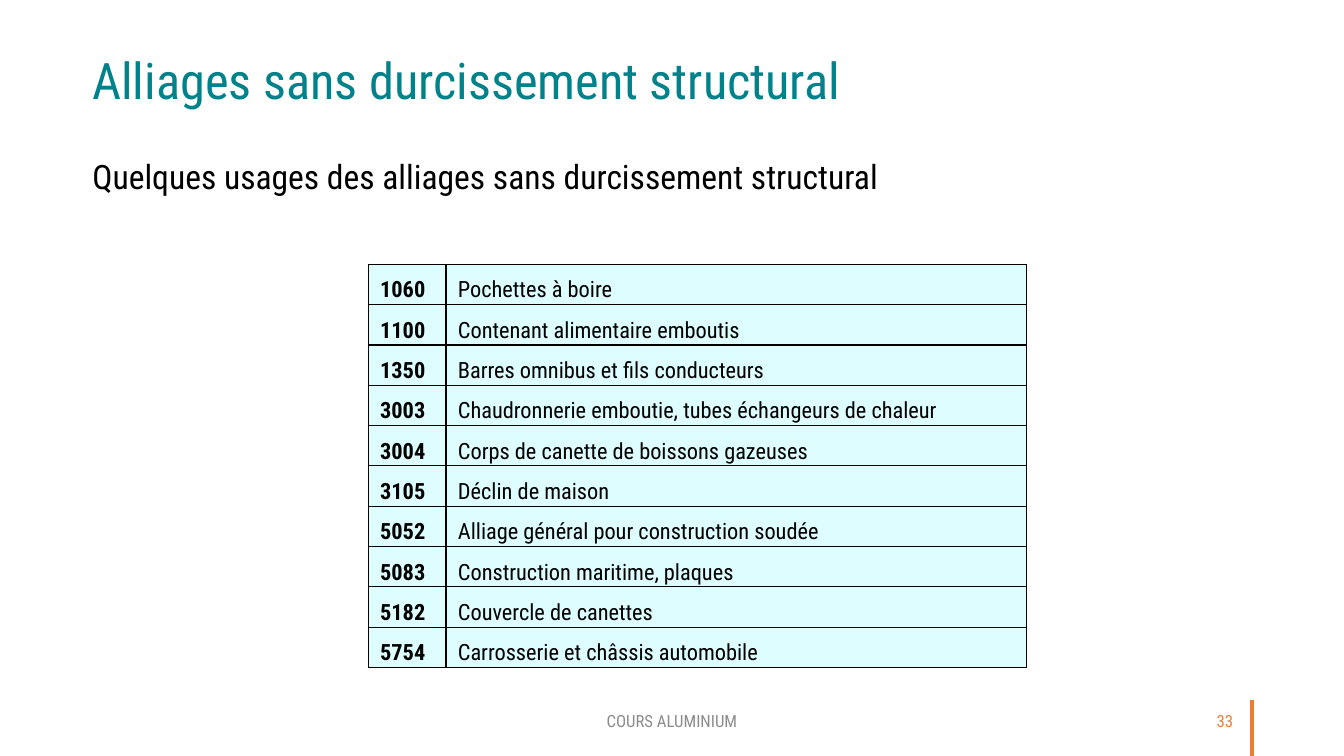
import dataclasses

import pptx
import pptx.dml.color
import pptx.enum.shapes
import pptx.enum.text
import pptx.oxml
import pptx.oxml.ns
import pptx.util

Cm = pptx.util.Cm
Pt = pptx.util.Pt
ALIGN = pptx.enum.text.PP_ALIGN
ANCHOR = pptx.enum.text.MSO_ANCHOR

FONT = "Roboto Condensed"
COLORS = {
    "title": "00828B",
    "text": "000000",
    "cell": "DDFDFF",
    "grid": "000000",
    "foot": "8C8C8C",
    "accent": "ED7D31",
}


@dataclasses.dataclass
class Label:
    text: str
    left: float
    top: float
    width: float
    height: float
    size: int
    color: str
    align: ALIGN = ALIGN.LEFT
    anchor: ANCHOR = ANCHOR.TOP
    lead: float = 0.9


@dataclasses.dataclass
class Alloy:
    code: str
    usage: str


LABELS = [
    Label("Alliages sans durcissement structural",
          2.33, 1.42, 27.28, 2.57, 36, "title"),
    Label("Quelques usages des alliages sans durcissement structural",
          2.33, 4.04, 29.21, 2, 24, "text"),
    Label("COURS ALUMINIUM", 11.22, 17.65, 11.43, 1.02, 12, "foot",
          ALIGN.CENTER, ANCHOR.MIDDLE, 1.0),
    Label("33", 23.92, 17.65, 7.16, 1.02, 12, "accent",
          ALIGN.RIGHT, ANCHOR.MIDDLE, 1.0),
]

ALLOYS = [
    Alloy("1060", "Pochettes à boire"),
    Alloy("1100", "Contenant alimentaire emboutis"),
    Alloy("1350", "Barres omnibus et fils conducteurs"),
    Alloy("3003", "Chaudronnerie emboutie, tubes échangeurs de chaleur"),
    Alloy("3004", "Corps de canette de boissons gazeuses"),
    Alloy("3105", "Déclin de maison"),
    Alloy("5052", "Alliage général pour construction soudée"),
    Alloy("5083", "Construction maritime, plaques"),
    Alloy("5182", "Couvercle de canettes"),
    Alloy("5754", "Carrosserie et châssis automobile"),
]
WIDTHS = (1.96, 14.63)
ROW = 1.0


def tint(name: str) -> pptx.dml.color.RGBColor:
    return pptx.dml.color.RGBColor.from_string(COLORS[name])


def style(frame, size: int, color: str, align: ALIGN, lead: float,
          bold: bool = False) -> None:
    para = frame.paragraphs[0]
    para.alignment = align
    para.line_spacing = lead
    font = para.runs[0].font
    font.name = FONT
    font.size = Pt(size)
    font.bold = bold
    font.color.rgb = tint(color)


def add_label(slide, label: Label) -> None:
    box = slide.shapes.add_textbox(Cm(label.left), Cm(label.top),
                                   Cm(label.width), Cm(label.height))
    frame = box.text_frame
    frame.word_wrap = True
    frame.vertical_anchor = label.anchor
    frame.margin_left = frame.margin_right = 0
    frame.margin_top = frame.margin_bottom = 0
    frame.text = label.text
    style(frame, label.size, label.color, label.align, label.lead)


def add_grid(cell) -> None:
    props = cell._tc.get_or_add_tcPr()
    space = pptx.oxml.ns.nsdecls("a")
    for spot, side in enumerate(("lnL", "lnR", "lnT", "lnB")):
        props.insert(spot, pptx.oxml.parse_xml(
            f'<a:{side} {space} w="{Pt(1)}"><a:solidFill>'
            f'<a:srgbClr val="{COLORS["grid"]}"/></a:solidFill></a:{side}>'))


def add_cell(cell, text: str, bold: bool) -> None:
    cell.margin_left = cell.margin_right = Cm(0.3)
    cell.margin_top = cell.margin_bottom = 0
    cell.fill.solid()
    cell.fill.fore_color.rgb = tint("cell")
    add_grid(cell)
    cell.text_frame.text = text
    style(cell.text_frame, 16, "text", ALIGN.JUSTIFY, 1.5, bold)


def add_alloys(slide) -> None:
    frame = slide.shapes.add_table(len(ALLOYS), len(WIDTHS), Cm(9.28), Cm(6.66),
                                   Cm(sum(WIDTHS)), Cm(ROW * len(ALLOYS)))
    table = frame.table
    table.first_row = table.horz_banding = False
    for column, width in zip(table.columns, WIDTHS):
        column.width = Cm(width)
    for index, alloy in enumerate(ALLOYS):
        table.rows[index].height = Cm(ROW)
        add_cell(table.cell(index, 0), alloy.code, True)
        add_cell(table.cell(index, 1), alloy.usage, False)


def add_mark(slide) -> None:
    line = slide.shapes.add_connector(pptx.enum.shapes.MSO_CONNECTOR.STRAIGHT,
                                      Cm(31.55), Cm(19.05), Cm(31.55), Cm(17.65))
    line.line.color.rgb = tint("accent")
    line.line.width = Pt(2.25)
    line._element.spPr.append(pptx.oxml.parse_xml(
        f'<a:effectLst {pptx.oxml.ns.nsdecls("a")}/>'))


def main() -> None:
    deck = pptx.Presentation()
    deck.slide_width = Cm(33.87)
    deck.slide_height = Cm(19.05)
    slide = deck.slides.add_slide(deck.slide_layouts[6])

    # Accent line beside the page number
    add_mark(slide)

    # Title, subtitle and footer
    for label in LABELS:
        add_label(slide, label)

    # Alloys and their uses
    add_alloys(slide)

    deck.save("out.pptx")


if __name__ == "__main__":
    main()
